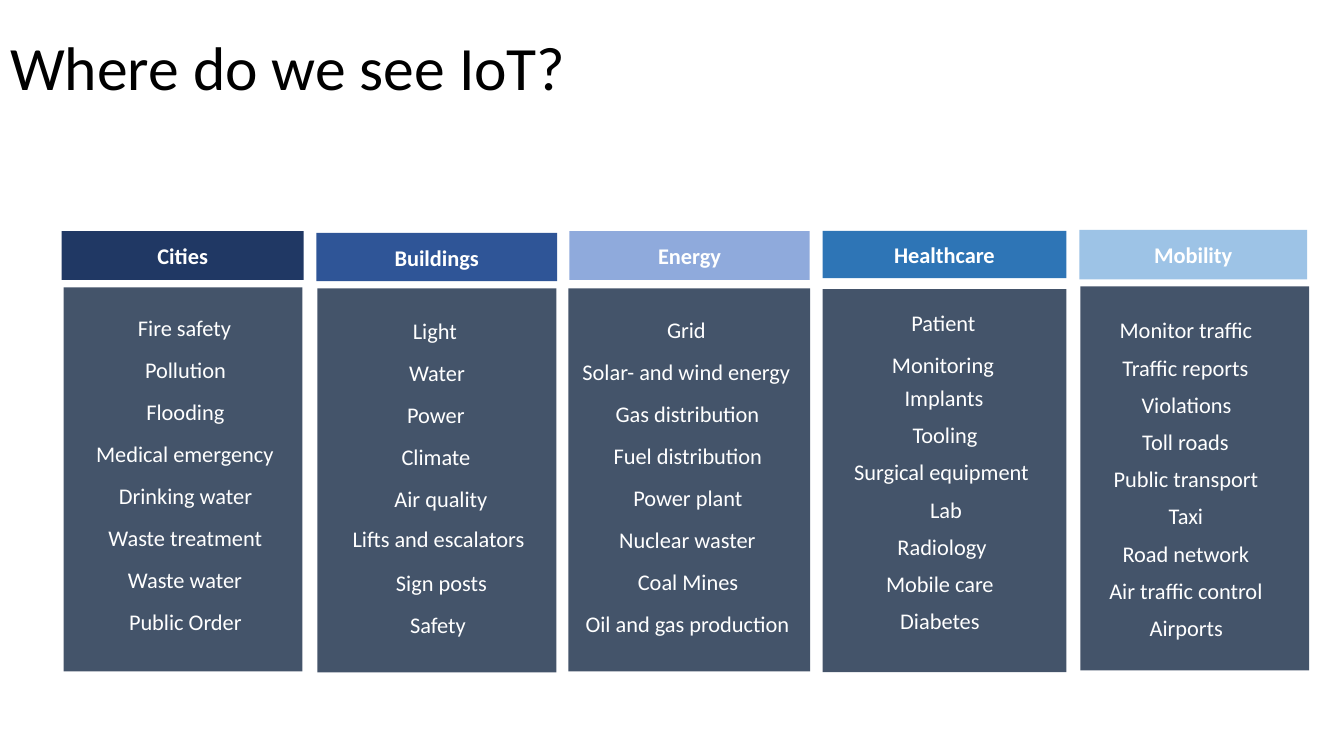
from pptx import Presentation
from pptx import util as u
from pptx.dml.color import RGBColor
from pptx.enum import shapes, text

BLACK = RGBColor(0x00, 0x00, 0x00)
WHITE = RGBColor(0xFF, 0xFF, 0xFF)
SLATE = RGBColor(0x44, 0x54, 0x6A)
NAVY = RGBColor(0x20, 0x38, 0x64)
ROYAL = RGBColor(0x2F, 0x55, 0x97)
PERIWINKLE = RGBColor(0x8F, 0xAA, 0xDC)
BLUE = RGBColor(0x2E, 0x75, 0xB6)
SKY = RGBColor(0x9D, 0xC3, 0xE6)

FONT = "Calibri"
LABEL_HEIGHT = 26.6
TITLE = "Where do we see IoT?"

# Content, in points: boxes are left, top, width, height; items are text, left, width
COLUMNS = [
    dict(name="Cities", color=NAVY, header=(44, 165, 173, 35),
         panel=(45.5, 205.2, 170.5, 274.3), first=221, pitch=30, items=[
             ("Fire safety", 88.6, 86.4), ("Pollution", 51.1, 162.7),
             ("Flooding", 51.1, 162.7), ("Medical emergency", 55.4, 153.4),
             ("Drinking water", 61.2, 142.6), ("Waste treatment", 66.2, 132.5),
             ("Waste water", 81.4, 101.5), ("Public Order", 55.4, 154.1)]),
    dict(name="Buildings", color=ROYAL, header=(226, 166.3, 172, 34.6),
         panel=(226.8, 206, 170.6, 274.3), first=223, pitch=30, items=[
             ("Light", 285.8, 49.7), ("Water", 283.7, 56.9),
             ("Power", 282.2, 58.3), ("Climate", 277.2, 68.4),
             ("Air quality", 271.4, 87.1), ("Lifts and escalators", 238.3, 149.8),
             ("Sign posts", 271.4, 87.8), ("Safety", 283.7, 58.3)]),
    dict(name="Energy", color=PERIWINKLE, header=(406.8, 165, 171.5, 35),
         panel=(406, 206, 172.8, 273.6), first=222, pitch=30, items=[
             ("Grid", 468, 44.6), ("Solar- and wind energy", 400.3, 180),
             ("Gas distribution", 427.7, 126.7), ("Fuel distribution", 426.2, 130.3),
             ("Power plant", 442.1, 98.6), ("Nuclear waster", 429.1, 123.8),
             ("Coal Mines", 445, 92.9), ("Oil and gas production", 402.5, 177.1)]),
    dict(name="Healthcare", color=BLUE, header=(587.5, 165, 174.2, 33.8),
         panel=(587.5, 206.6, 174.2, 273.6), first=217.5, pitch=26.6, items=[
             ("Patient", 642.2, 63.4), ("Monitoring", 626.4, 94.3),
             ("Implants", 636.5, 75.6), ("Tooling", 641.5, 67),
             ("Surgical equipment", 596.2, 152.6), ("Lab", 655.9, 39.6),
             ("Radiology", 630, 85.7), ("Mobile care", 617, 108.7),
             ("Diabetes", 594, 154.8)]),
    dict(name="Mobility", color=SKY, header=(771, 164.2, 162.7, 35.3),
         panel=(771.8, 204.5, 163.4, 274.3), first=222.5, pitch=26.6, items=[
             ("Monitor traffic", 788.4, 117.4), ("Traffic reports", 790.6, 112.3),
             ("Violations", 805, 85), ("Toll roads", 805.7, 82.1),
             ("Public transport", 783.4, 127.4), ("Taxi", 826.6, 41),
             ("Road network", 790.6, 113), ("Air traffic control", 779.8, 134.6),
             ("Airports", 811.4, 72)]),
]
# Labels that sit slightly off the even row pitch
NUDGES = {"Monitoring": 2.9, "Lifts and escalators": -1.4}


def points(*lengths):
    return [u.Pt(length) for length in lengths]


def write(shape, words, size=16, color=WHITE, bold=False,
          align=text.PP_ALIGN.CENTER, anchor=text.MSO_ANCHOR.MIDDLE,
          inset=None, wrap=True, spacing=None):
    frame = shape.text_frame
    frame.word_wrap = wrap
    frame.vertical_anchor = anchor
    if inset is not None:
        frame.margin_left = frame.margin_right = u.Pt(inset)
        frame.margin_top = frame.margin_bottom = u.Pt(inset)
    paragraph = frame.paragraphs[0]
    paragraph.text = words
    paragraph.alignment = align
    if spacing:
        paragraph.line_spacing = spacing
    font = paragraph.runs[0].font
    font.name, font.size, font.bold = FONT, u.Pt(size), bold
    font.color.rgb = color


def add_block(group, box, color):
    shape = group.shapes.add_shape(shapes.MSO_SHAPE.RECTANGLE, *points(*box))
    shape.shadow.inherit = False
    shape.fill.solid()
    shape.fill.fore_color.rgb = color
    shape.line.fill.background()
    return shape


presentation = Presentation()
presentation.slide_width, presentation.slide_height = points(960, 540)
slide = presentation.slides.add_slide(presentation.slide_layouts[5])

# Title
title = slide.shapes.title
title.left, title.top, title.width, title.height = points(0, -1.5, 828, 104.5)
write(title, TITLE, size=44, color=BLACK, align=text.PP_ALIGN.LEFT, spacing=0.9)

# One group per column: panel, header, evenly pitched labels
for column in COLUMNS:
    group = slide.shapes.add_group_shape()
    add_block(group, column["panel"], SLATE)
    header = add_block(group, column["header"], column["color"])
    write(header, column["name"], bold=True, inset=0)
    for row, (words, left, width) in enumerate(column["items"]):
        top = column["first"] + row * column["pitch"] + NUDGES.get(words, 0)
        label = group.shapes.add_textbox(*points(left, top, width, LABEL_HEIGHT))
        write(label, words, anchor=text.MSO_ANCHOR.TOP, wrap=False)

presentation.save("out.pptx")
